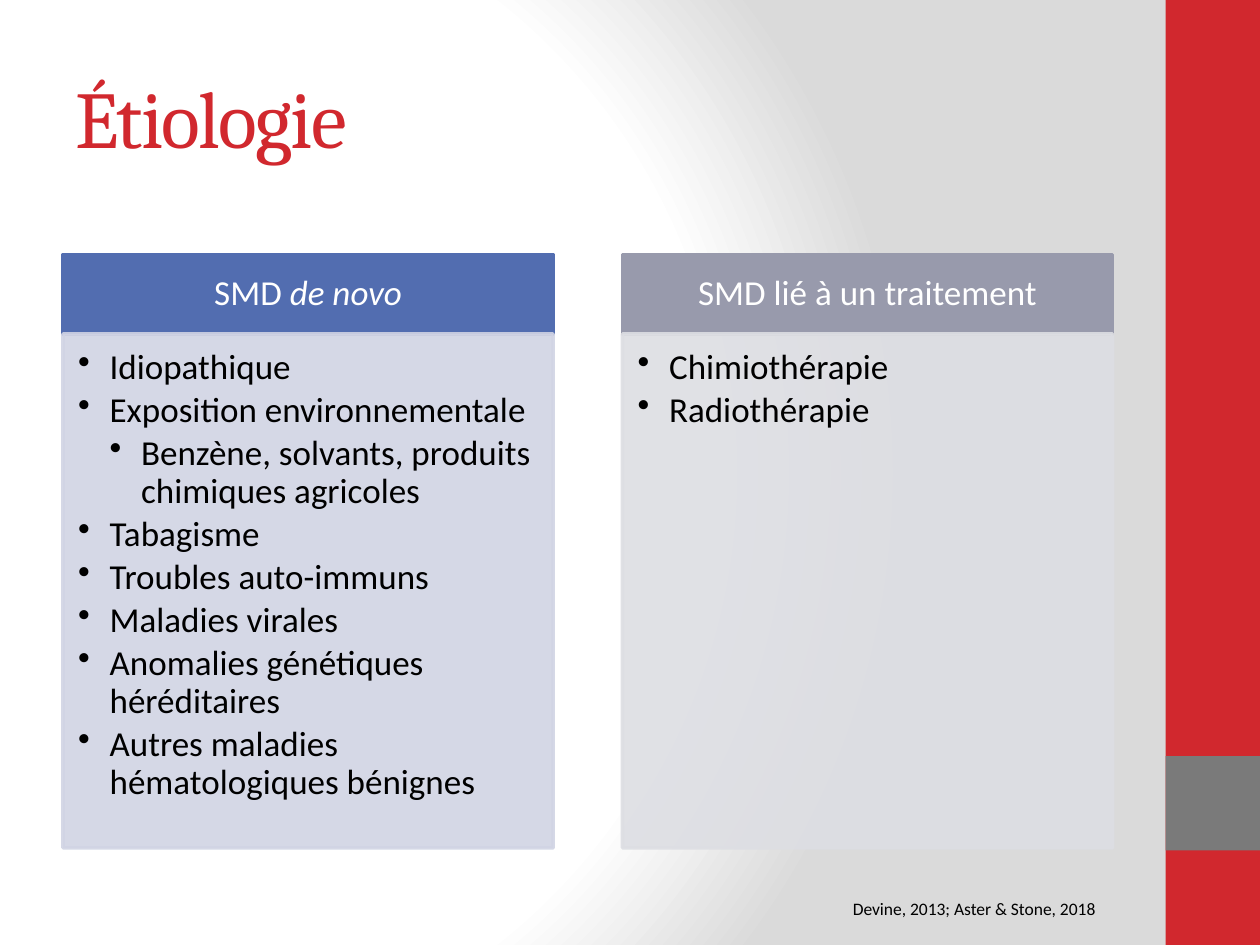
from lxml.etree import SubElement
from pptx import Presentation
from pptx.dml.color import RGBColor
from pptx.enum.shapes import MSO_SHAPE
from pptx.enum.text import MSO_ANCHOR, PP_ALIGN
from pptx.oxml import parse_xml
from pptx.oxml.ns import nsdecls, qn
from pptx.util import Inches, Pt

RED = RGBColor(0xD1, 0x28, 0x2E)
GREY = RGBColor(0x7A, 0x7A, 0x7A)
BLUE = RGBColor(0x52, 0x6D, 0xB0)
PALE_BLUE = RGBColor(0xD1, 0xD4, 0xE4)
SLATE = RGBColor(0x98, 0x9A, 0xAC)
PALE_SLATE = RGBColor(0xDD, 0xDE, 0xE3)
WHITE = RGBColor(0xFF, 0xFF, 0xFF)
BLACK = RGBColor(0x00, 0x00, 0x00)
BACKDROP_STOPS = [(0, WHITE), (75, WHITE), (100, RGBColor(0xDA, 0xDA, 0xDA))]

COLUMN_WIDTH = 3.89
HEADER_TOP, HEADER_HEIGHT = 2.02, 0.63
BODY_HEIGHT = 4.08

COLUMNS = [
    (0.5, BLUE, PALE_BLUE, [("SMD ", False), ("de novo", True)], [
        ("Idiopathique", 1),
        ("Exposition environnementale", 1),
        ("Benzène, solvants, produits chimiques agricoles", 2),
        ("Tabagisme", 1),
        ("Troubles auto-immuns", 1),
        ("Maladies virales", 1),
        ("Anomalies génétiques héréditaires", 1),
        ("Autres maladies hématologiques bénignes", 1),
    ]),
    (4.94, SLATE, PALE_SLATE, [("SMD lié à un traitement", False)], [
        ("Chimiothérapie", 1),
        ("Radiothérapie", 1),
    ]),
]


def paint_backdrop(slide):
    slide.background.fill.solid()
    properties = slide.element.find(".//" + qn("p:bgPr"))
    stops = "".join(
        f'<a:gs pos="{position * 1000}"><a:srgbClr val="{color}"/></a:gs>'
        for position, color in BACKDROP_STOPS
    )
    gradient = parse_xml(
        f'<a:gradFill {nsdecls("a")} rotWithShape="1"><a:gsLst>{stops}</a:gsLst>'
        '<a:path path="circle"><a:fillToRect l="20000" t="50000" r="100000" b="50000"/>'
        "</a:path></a:gradFill>"
    )
    properties.replace(properties.find(qn("a:solidFill")), gradient)


def add_block(slide, left, top, width, height, color, outlined=False, opacity=100):
    block = slide.shapes.add_shape(
        MSO_SHAPE.RECTANGLE, Inches(left), Inches(top), Inches(width), Inches(height)
    )
    block.shadow.inherit = False
    block.fill.solid()
    block.fill.fore_color.rgb = color
    if outlined:
        block.line.color.rgb = color
        block.line.width = Pt(2)
    else:
        block.line.fill.background()
    if opacity < 100:
        for tint in block.element.spPr.iter(qn("a:srgbClr")):
            SubElement(tint, qn("a:alpha"), val=str(opacity * 1000))
    return block


def set_insets(frame, left, top, right, bottom):
    frame.word_wrap = True
    frame.margin_left, frame.margin_top = Inches(left), Inches(top)
    frame.margin_right, frame.margin_bottom = Inches(right), Inches(bottom)


def style_paragraph(paragraph, size, color, typeface="Calibri"):
    paragraph.font.size = Pt(size)
    paragraph.font.name = typeface
    paragraph.font.color.rgb = color


def add_label(slide, left, top, width, height, text, size, color, typeface="Calibri"):
    label = slide.shapes.add_textbox(
        Inches(left), Inches(top), Inches(width), Inches(height)
    )
    label.text_frame.word_wrap = True
    paragraph = label.text_frame.paragraphs[0]
    paragraph.text = text
    style_paragraph(paragraph, size, color, typeface)
    return label


def add_title(slide, text):
    title = add_label(slide, 0.5, 0.3, 8.33, 1.25, text, 46, RED, "Cambria")
    title.text_frame.vertical_anchor = MSO_ANCHOR.MIDDLE
    for run in title.text_frame.paragraphs[0].runs:
        run.font.element.set("spc", "-100") if hasattr(run.font, "element") else (
            run._r.get_or_add_rPr().set("spc", "-100")
        )


def add_header(slide, left, color, pieces):
    header = add_block(
        slide, left, HEADER_TOP, COLUMN_WIDTH, HEADER_HEIGHT, color, outlined=True
    )
    frame = header.text_frame
    set_insets(frame, 0.16, 0.09, 0.16, 0.09)
    frame.vertical_anchor = MSO_ANCHOR.MIDDLE
    paragraph = frame.paragraphs[0]
    paragraph.alignment = PP_ALIGN.CENTER
    paragraph.line_spacing = 0.9
    for text, italic in pieces:
        run = paragraph.add_run()
        run.text = text
        if italic:
            run.font.italic = True
    style_paragraph(paragraph, 20, WHITE)


def add_bullet(paragraph, text, level):
    paragraph.text = text
    paragraph.level = level
    paragraph.alignment = PP_ALIGN.LEFT
    paragraph.line_spacing = 0.9
    paragraph.space_after = Pt(3)
    properties = paragraph._p.get_or_add_pPr()
    properties.set("marL", str(Inches(0.25 * level)))
    properties.set("indent", str(-Inches(0.25)))
    SubElement(properties, qn("a:buChar"), char="•")
    style_paragraph(paragraph, 20, BLACK)


def add_causes(slide, left, color, causes):
    body = add_block(
        slide, left, HEADER_TOP + HEADER_HEIGHT, COLUMN_WIDTH, BODY_HEIGHT, color,
        outlined=True, opacity=90,
    )
    frame = body.text_frame
    set_insets(frame, 0.12, 0.12, 0.16, 0.17)
    frame.vertical_anchor = MSO_ANCHOR.TOP
    for index, (text, level) in enumerate(causes):
        paragraph = frame.add_paragraph() if index else frame.paragraphs[0]
        add_bullet(paragraph, text, level)


def main():
    presentation = Presentation()
    presentation.slide_width, presentation.slide_height = Inches(10), Inches(7.5)
    slide = presentation.slides.add_slide(presentation.slide_layouts[6])
    paint_backdrop(slide)
    add_block(slide, 9.25, 0, 0.75, 7.5, RED)
    add_block(slide, 9.25, 6, 0.75, 0.75, GREY)
    add_title(slide, "Étiologie")
    for left, header_color, body_color, heading, causes in COLUMNS:
        add_header(slide, left, header_color, heading)
        add_causes(slide, left, body_color, causes)
    add_label(
        slide, 6.67, 7.08, 2.25, 0.27, "Devine, 2013; Aster & Stone, 2018", 10, BLACK
    )
    presentation.save("out.pptx")


if __name__ == "__main__":
    main()
